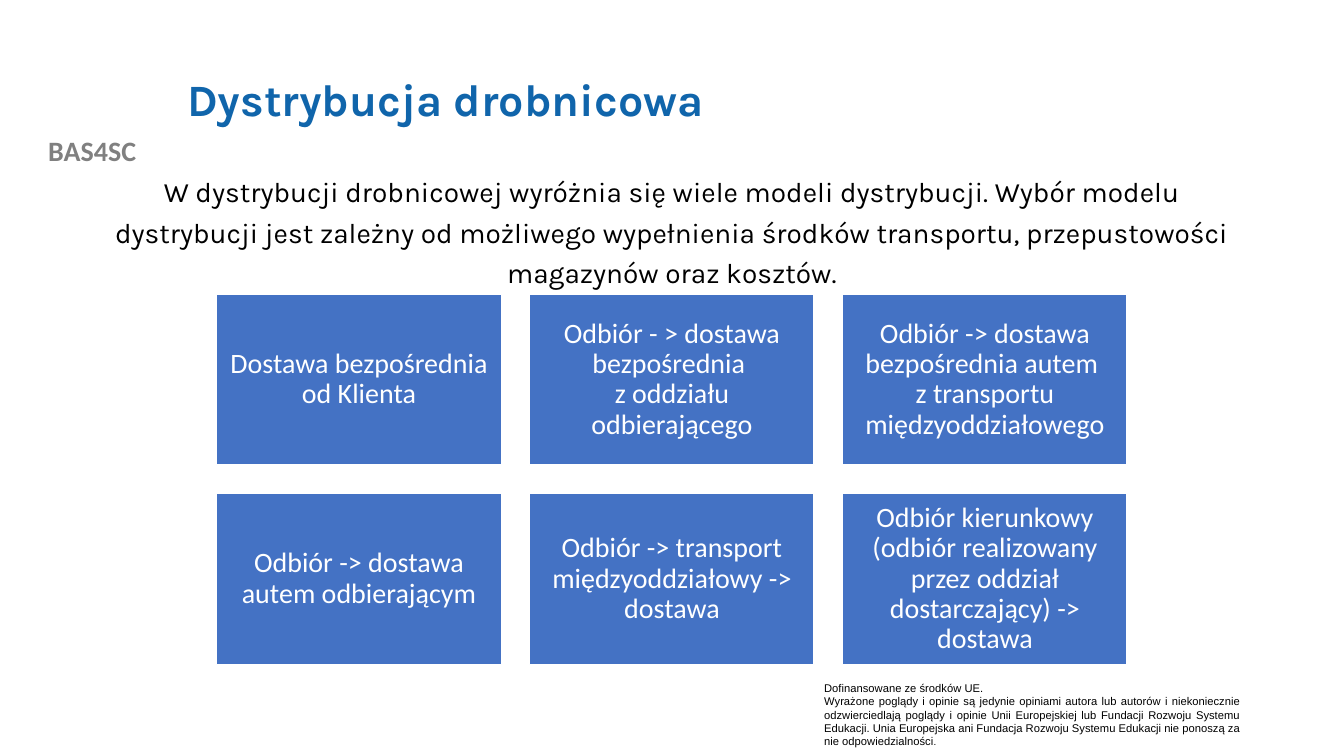
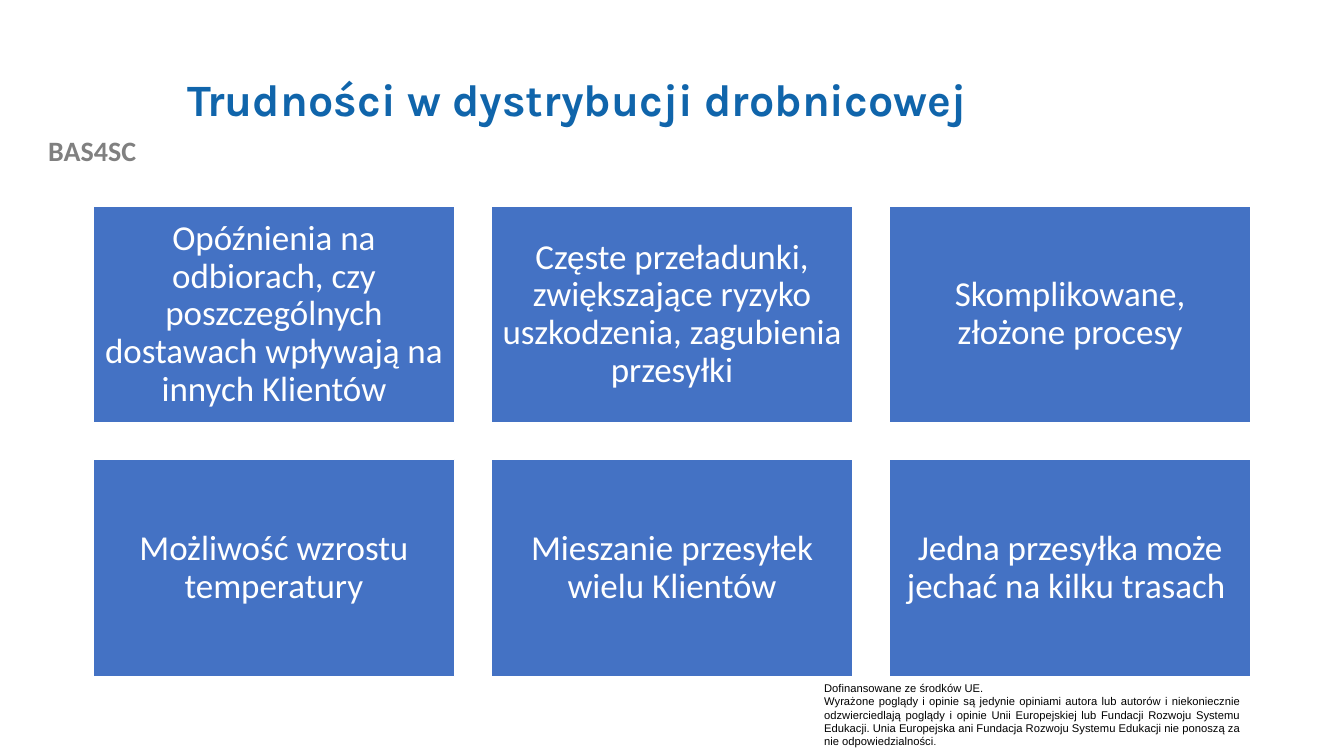
import pptx
import pptx.dml.color
import pptx.enum.shapes
import pptx.enum.text
import pptx.util

Cm = pptx.util.Cm
Pt = pptx.util.Pt
ALIGN = pptx.enum.text.PP_ALIGN
ANCHOR = pptx.enum.text.MSO_ANCHOR

# Shared look, lengths in centimetres
SLIDE_WIDTH, SLIDE_HEIGHT = 33.87, 19.05
TITLE_BLUE = "1065AB"
CARD_BLUE = "4472C4"
GREY = "808080"
BLACK = "000000"
WHITE = "FFFFFF"
COLUMNS = 3
GAP_RATIO = 0.1
HEIGHT_RATIO = 0.6

FOOTER_LEAD = "Dofinansowane ze środków UE."
FOOTER_TEXT = (
    "Wyrażone poglądy i opinie są jedynie opiniami autora lub autorów i "
    "niekoniecznie odzwierciedlają poglądy i opinie Unii Europejskiej lub "
    "Fundacji Rozwoju Systemu Edukacji. Unia Europejska ani Fundacja Rozwoju "
    "Systemu Edukacji nie ponoszą za nie odpowiedzialności"
)

# Slide content
MODELS_INTRO = (
    "W dystrybucji drobnicowej wyróżnia się wiele modeli dystrybucji. Wybór "
    "modelu dystrybucji jest zależny od możliwego wypełnienia środków "
    "transportu, przepustowości magazynów oraz kosztów."
)
MODELS = [
    "Dostawa bezpośrednia od Klienta",
    "Odbiór - > dostawa bezpośrednia \nz oddziału odbierającego",
    "Odbiór -> dostawa bezpośrednia autem \nz transportu międzyoddziałowego",
    "Odbiór -> dostawa autem odbierającym",
    "Odbiór -> transport międzyoddziałowy -> dostawa",
    "Odbiór kierunkowy (odbiór realizowany przez oddział dostarczający) -> dostawa",
]
DIFFICULTIES = [
    "Opóźnienia na odbiorach, czy poszczególnych dostawach wpływają na innych Klientów",
    "Częste przeładunki, zwiększające ryzyko uszkodzenia, zagubienia przesyłki",
    "Skomplikowane, złożone procesy",
    "Możliwość wzrostu temperatury",
    "Mieszanie przesyłek wielu Klientów",
    "Jedna przesyłka może jechać na kilku trasach ",
]


def color(value):
    return pptx.dml.color.RGBColor.from_string(value)


def add_span(para, text, font, size, fill, bold=False):
    """Add a run, turning each newline into a line break."""
    for number, line in enumerate(text.split("\n")):
        if number:
            para.add_line_break()
        span = para.add_run()
        span.text = line
        span.font.name = font
        span.font.size = Pt(size)
        span.font.bold = bold
        span.font.color.rgb = color(fill)


def add_text_box(page, left, top, width, height, anchor=ANCHOR.TOP):
    box = page.shapes.add_textbox(Cm(left), Cm(top), Cm(width), Cm(height))
    box.text_frame.word_wrap = True
    box.text_frame.vertical_anchor = anchor
    return box.text_frame


def style_para(para, align, line_spacing=1.0):
    para.alignment = align
    para.line_spacing = line_spacing
    return para


def add_project_label(page):
    frame = add_text_box(page, 0, 3.25, 4.65, 1.12)
    para = style_para(frame.paragraphs[0], ALIGN.CENTER)
    add_span(para, "BAS4SC", "Calibri", 20, GREY, bold=True)


def add_footer(page):
    frame = add_text_box(page, 20.52, 17.04, 11, 1.96)
    lead = style_para(frame.paragraphs[0], ALIGN.JUSTIFY)
    add_span(lead, FOOTER_LEAD, "Arial", 8, BLACK)
    notice = style_para(frame.add_paragraph(), ALIGN.JUSTIFY)
    add_span(notice, FOOTER_TEXT, "Arial", 8, BLACK)
    add_span(notice, ".", "Arial", 7, BLACK)


def add_title(page, text):
    frame = add_text_box(page, 4.47, 1.02, 27.08, 3.1, ANCHOR.MIDDLE)
    para = style_para(frame.paragraphs[0], ALIGN.LEFT, 0.9)
    add_span(para, text, "Karla", 32, TITLE_BLUE, bold=True)


def add_intro(page, text):
    frame = add_text_box(page, 2.33, 4.11, 29.21, 3.38)
    para = style_para(frame.paragraphs[0], ALIGN.CENTER, 1.2)
    add_span(para, text, "Karla", 20, BLACK)


def add_card(page, left, top, width, height, text, size, inset):
    card = page.shapes.add_shape(
        pptx.enum.shapes.MSO_SHAPE.RECTANGLE,
        Cm(left), Cm(top), Cm(width), Cm(height))
    card.shadow.inherit = False
    card.fill.solid()
    card.fill.fore_color.rgb = color(CARD_BLUE)
    card.line.color.rgb = color(WHITE)
    card.line.width = Pt(1)
    frame = card.text_frame
    frame.word_wrap = True
    frame.vertical_anchor = ANCHOR.MIDDLE
    frame.margin_left = frame.margin_right = Cm(inset)
    frame.margin_top = frame.margin_bottom = Cm(inset)
    para = style_para(frame.paragraphs[0], ALIGN.CENTER, 0.9)
    add_span(para, text, "Calibri", size, WHITE)


def add_card_grid(page, texts, top, width, size, inset):
    """Place the cards in rows, centred across the slide."""
    gap = width * GAP_RATIO
    height = width * HEIGHT_RATIO
    left = (SLIDE_WIDTH - COLUMNS * width - (COLUMNS - 1) * gap) / 2
    for number, text in enumerate(texts):
        row, column = divmod(number, COLUMNS)
        add_card(page, left + column * (width + gap), top + row * (height + gap),
                 width, height, text, size, inset)


def add_page(deck, title):
    page = deck.slides.add_slide(deck.slide_layouts[6])
    add_project_label(page)
    add_footer(page)
    add_title(page, title)
    return page


def main():
    deck = pptx.Presentation()
    deck.slide_width = Cm(SLIDE_WIDTH)
    deck.slide_height = Cm(SLIDE_HEIGHT)

    # Distribution models
    page = add_page(deck, "Dystrybucja drobnicowa")
    add_card_grid(page, MODELS, top=7.42, width=7.17, size=20, inset=0.2)
    add_intro(page, MODELS_INTRO)

    # Difficulties
    page = add_page(deck, "Trudności w dystrybucji drobnicowej")
    add_card_grid(page, DIFFICULTIES, top=5.19, width=9.12, size=25, inset=0.25)

    deck.save("out.pptx")


if __name__ == "__main__":
    main()
